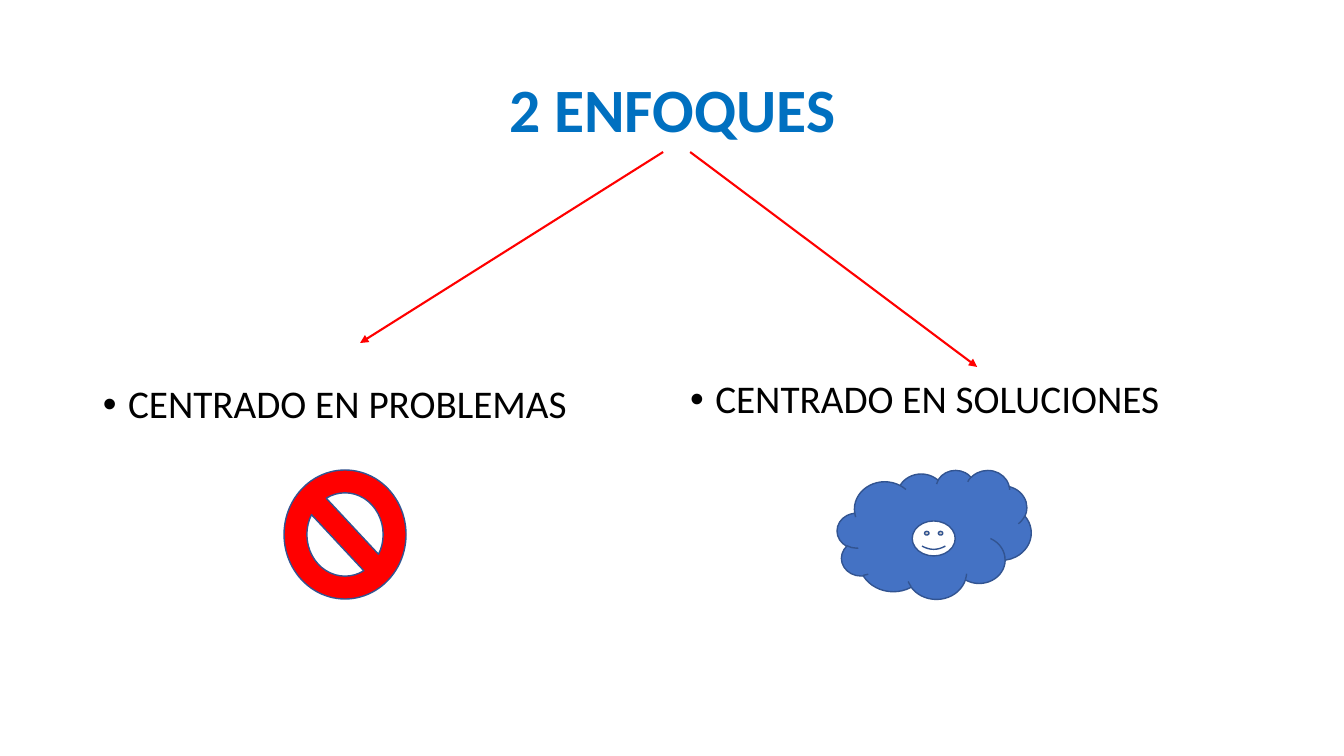
"""Build a slide that sets two approaches side by side under one title."""
import pptx
import pptx.dml.color
import pptx.enum.shapes
import pptx.enum.text
import pptx.oxml
import pptx.oxml.ns
import pptx.util

RGB = pptx.dml.color.RGBColor
SHAPE = pptx.enum.shapes.MSO_SHAPE
BLUE = RGB(0x00, 0x70, 0xC0)
RED = RGB(0xFF, 0x00, 0x00)
BLACK = RGB(0x00, 0x00, 0x00)
WHITE = RGB(0xFF, 0xFF, 0xFF)
CLOUD_BLUE = RGB(0x44, 0x72, 0xC4)
OUTLINE = RGB(0x32, 0x54, 0x91)
FONT = "Calibri"
EMU_PER_PX = 914400 / 100.8

TITLE = ("2 ENFOQUES", (93, 40, 1159, 146))
APPROACHES = [
    ("CENTRADO EN PROBLEMAS", (93, 380, 571, 54)),
    ("CENTRADO EN SOLUCIONES", (680, 375, 571, 54)),
]
ICONS = [
    (SHAPE.NO_SYMBOL, (284, 470, 122, 129), RED),
    (SHAPE.CLOUD, (837, 470, 194, 129), CLOUD_BLUE),
    (SHAPE.SMILEY_FACE, (912, 521, 43, 35), WHITE),
]
ARROWS = [(663, 152, 360, 343), (690, 152, 977, 367)]


def emu(lengths):
    return [round(n * EMU_PER_PX) for n in lengths]


def add_text(p, text, size, color, bold=False):
    p.line_spacing = 0.9
    r = p.add_run()
    r.text = text
    r.font.name = FONT
    r.font.size = pptx.util.Pt(size)
    r.font.bold = bold
    r.font.color.rgb = color


def add_title(s):
    text, box = TITLE
    sp = s.shapes.title
    sp.left, sp.top, sp.width, sp.height = emu(box)
    tf = sp.text_frame
    tf.vertical_anchor = pptx.enum.text.MSO_ANCHOR.MIDDLE
    p = tf.paragraphs[0]
    p.alignment = pptx.enum.text.PP_ALIGN.CENTER
    add_text(p, text, 44, BLUE, True)


def add_bullet(s, text, box):
    tf = s.shapes.add_textbox(*emu(box)).text_frame
    tf.word_wrap = True
    p = tf.paragraphs[0]
    add_text(p, text, 28, BLACK)
    pPr = p._p.get_or_add_pPr()
    indent = pptx.util.Inches(0.25)
    pPr.set("marL", str(indent))
    pPr.set("indent", str(-indent))
    for tag, key, value in (("a:buFont", "typeface", "Arial"), ("a:buChar", "char", "•")):
        bullet = pptx.oxml.parse_xml(f'<{tag} {pptx.oxml.ns.nsdecls("a")} {key}="{value}"/>')
        pPr.append(bullet)


def add_icon(s, kind, box, fill):
    sp = s.shapes.add_shape(kind, *emu(box))
    sp.shadow.inherit = False
    sp.fill.solid()
    sp.fill.fore_color.rgb = fill
    sp.line.color.rgb = OUTLINE
    sp.line.width = pptx.util.Pt(1)


def add_arrow(s, ends):
    sp = s.shapes.add_connector(pptx.enum.shapes.MSO_CONNECTOR.STRAIGHT, *emu(ends))
    sp.line.color.rgb = RED
    sp.line.width = pptx.util.Pt(1.5)
    ns = pptx.oxml.ns.nsdecls("a")
    sp.line._get_or_add_ln().append(pptx.oxml.parse_xml(f'<a:tailEnd {ns} type="triangle"/>'))
    sp._element.spPr.append(pptx.oxml.parse_xml(f"<a:effectLst {ns}/>"))


def main():
    prs = pptx.Presentation()
    prs.slide_width = pptx.util.Inches(13.33)
    prs.slide_height = pptx.util.Inches(7.5)
    s = prs.slides.add_slide(prs.slide_layouts[5])
    add_title(s)
    for text, box in APPROACHES:
        add_bullet(s, text, box)
    for ends in ARROWS:
        add_arrow(s, ends)
    for kind, box, fill in ICONS:
        add_icon(s, kind, box, fill)
    prs.save("out.pptx")


if __name__ == "__main__":
    main()
